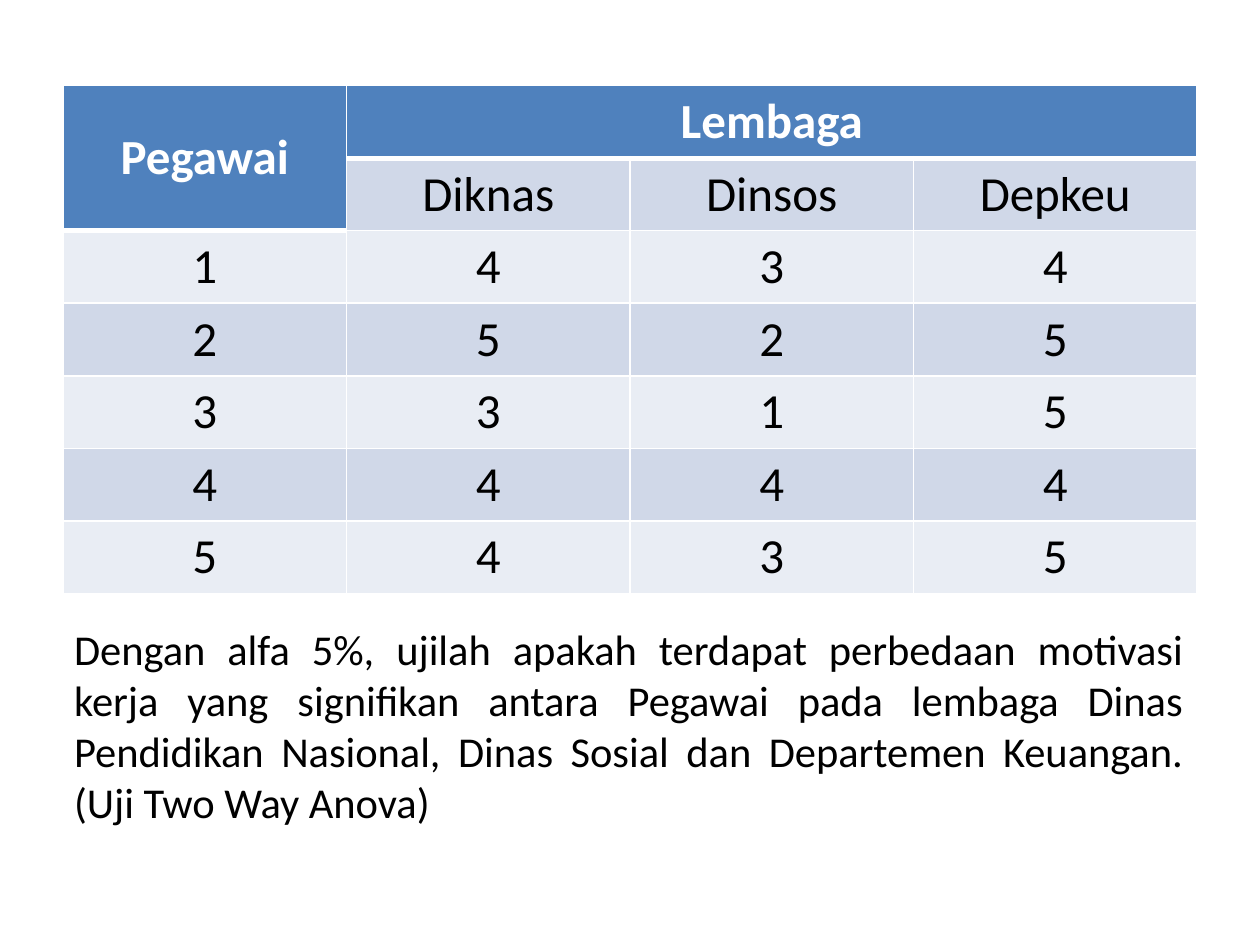
import lxml.etree
import pptx
import pptx.dml.color
import pptx.enum.text
import pptx.oxml.ns
import pptx.util
from pptx.util import Inches

HEADERS = ["Pegawai", "Lembaga", "", ""]
AGENCIES = ["", "Diknas", "Dinsos", "Depkeu"]
SCORES = [(4, 3, 4), (5, 2, 5), (3, 1, 5), (4, 4, 4), (4, 3, 5)]
QUESTION = (
    "Dengan alfa 5%, ujilah apakah terdapat perbedaan motivasi kerja yang "
    "signifikan antara Pegawai pada lembaga Dinas Pendidikan Nasional, Dinas "
    "Sosial dan Departemen Keuangan. (Uji Two Way Anova)"
)
ALIGN = pptx.enum.text.PP_ALIGN
MIDDLE = pptx.enum.text.MSO_ANCHOR.MIDDLE


def color(hex_string):
    return pptx.dml.color.RGBColor.from_string(hex_string)


def add_run(paragraph, text, size, hex_string, bold, alignment):
    paragraph.alignment = alignment
    run = paragraph.add_run()
    run.text = text
    run.font.name = "Calibri"
    run.font.size = pptx.util.Pt(size)
    run.font.bold = bold
    run.font.color.rgb = color(hex_string)


presentation = pptx.Presentation()
presentation.slide_width = Inches(10)
presentation.slide_height = Inches(7.5)
slide = presentation.slides.add_slide(presentation.slide_layouts[6])

# Scores per employee and agency
rows = [HEADERS, AGENCIES]
rows += [[str(number), *scores] for number, scores in enumerate(SCORES, 1)]
table = slide.shapes.add_table(
    len(rows), 4, Inches(0.5), Inches(0.68), Inches(9), Inches(0.57) * len(rows)
).table
table.cell(0, 0).merge(table.cell(1, 0))
table.cell(0, 1).merge(table.cell(0, 3))

for row_index, values in enumerate(rows):
    for column_index, value in enumerate(values):
        cell = table.cell(row_index, column_index)
        is_header = row_index == 0 or (row_index == 1 and column_index == 0)
        cell.vertical_anchor = MIDDLE

        properties = cell._tc.get_or_add_tcPr()
        for side in ("lnL", "lnR", "lnT", "lnB"):
            points = 3 if is_header and side == "lnB" else 1
            line = lxml.etree.SubElement(
                properties, pptx.oxml.ns.qn("a:" + side), w=str(pptx.util.Pt(points))
            )
            fill = lxml.etree.SubElement(line, pptx.oxml.ns.qn("a:solidFill"))
            lxml.etree.SubElement(fill, pptx.oxml.ns.qn("a:srgbClr"), val="FFFFFF")

        band = "D0D8E8" if row_index % 2 else "E9EDF4"
        cell.fill.solid()
        cell.fill.fore_color.rgb = color("4F81BD" if is_header else band)
        if not cell.is_spanned:
            add_run(cell.text_frame.paragraphs[0], str(value), 28,
                    "FFFFFF" if is_header else "000000", is_header, ALIGN.CENTER)

# Question below the table
question_box = slide.shapes.add_textbox(
    Inches(0.49), Inches(4.93), Inches(9), Inches(1.65)
)
text_frame = question_box.text_frame
text_frame.word_wrap = True
text_frame.vertical_anchor = MIDDLE
add_run(text_frame.paragraphs[0], QUESTION, 24.3, "000000", False, ALIGN.JUSTIFY)

presentation.save("out.pptx")
